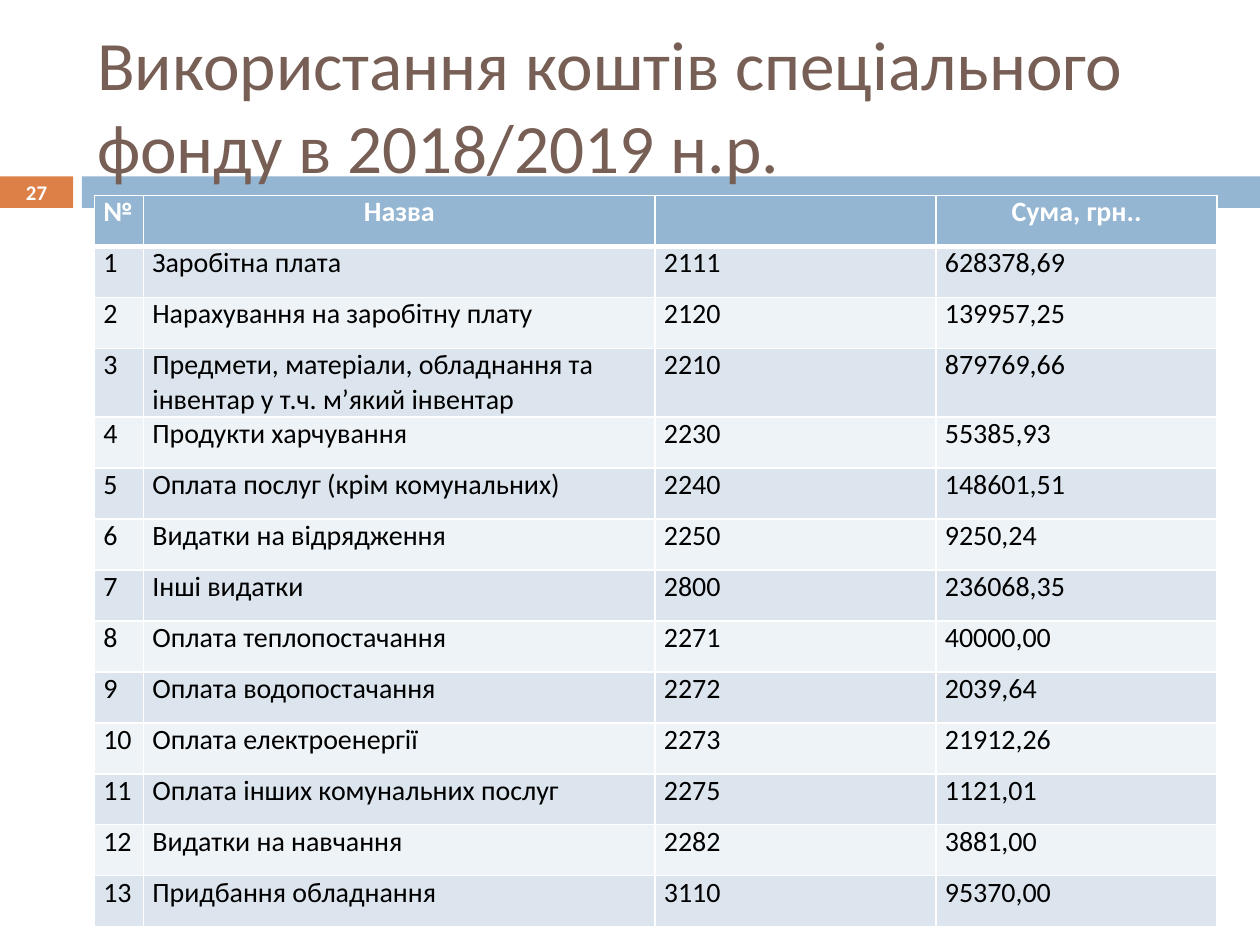
from dataclasses import dataclass

from lxml import etree
from pptx import Presentation
from pptx import util as u
from pptx.dml.color import RGBColor
from pptx.enum import shapes, text
from pptx.oxml import ns


@dataclass(frozen=True)
class Theme:
    font: str = "Calibri"
    brown: str = "775F55"
    orange: str = "DD8047"
    blue: str = "94B6D2"
    odd: str = "DCE5EE"
    even: str = "EEF3F7"
    white: str = "FFFFFF"
    black: str = "000000"
    title: float = 39.6
    body: float = 16
    page: float = 11.9


THEME = Theme()
ALIGN = text.PP_ALIGN
HEADS = ["№", "Назва", "", "Сума, грн.."]
HEAD_ALIGN = [ALIGN.JUSTIFY, ALIGN.CENTER, ALIGN.CENTER, ALIGN.CENTER]
COSTS = [
    ("Заробітна плата", "2111", "628378,69"),
    ("Нарахування на заробітну плату", "2120", "139957,25"),
    ("Предмети, матеріали, обладнання та інвентар у т.ч. м’який інвентар",
     "2210", "879769,66"),
    ("Продукти харчування", "2230", "55385,93"),
    ("Оплата послуг (крім комунальних)", "2240", "148601,51"),
    ("Видатки на відрядження", "2250", "9250,24"),
    ("Інші видатки", "2800", "236068,35"),
    ("Оплата теплопостачання", "2271", "40000,00"),
    ("Оплата водопостачання", "2272", "2039,64"),
    ("Оплата електроенергії", "2273", "21912,26"),
    ("Оплата інших комунальних послуг", "2275", "1121,01"),
    ("Видатки на навчання", "2282", "3881,00"),
    ("Придбання обладнання", "3110", "95370,00"),
]
WIDTHS = [0.39, 4.06, 2.23, 2.23]


def assign(item, values):
    for name, value in values.items():
        setattr(item, name, value)


def box(*sides):
    return [u.Inches(side) for side in sides]


def paint(fill, color):
    fill.solid()
    fill.fore_color.rgb = RGBColor.from_string(color)


def write(frame, words, size, color, bold=False, align=ALIGN.LEFT):
    par = frame.paragraphs[0]
    par.alignment = align
    run = par.add_run()
    run.text = words
    assign(run.font, {"name": THEME.font, "size": u.Pt(size), "bold": bold})
    run.font.color.rgb = RGBColor.from_string(color)


def add_band(slide, left, width, color):
    band = slide.shapes.add_shape(shapes.MSO_SHAPE.RECTANGLE,
                                  *box(left, 1.4, width, 0.25))
    band.shadow.inherit = False
    paint(band.fill, color)
    band.line.fill.background()


def set_title(slide, words):
    title = slide.shapes.title
    assign(title, dict(zip(("left", "top", "width", "height"),
                           box(0.67, 0.25, 8.92, 1.16))))
    frame = title.text_frame
    assign(frame, {"word_wrap": True, "auto_size": text.MSO_AUTO_SIZE.NONE,
                   "vertical_anchor": text.MSO_ANCHOR.MIDDLE})
    write(frame, words, THEME.title, THEME.brown)
    # The title lies above the bands and below the table.
    slide.shapes._spTree.append(title._element)


def add_edges(cell, base):
    """Draw white cell borders, with the bottom one base points wide."""
    props = cell._tc.get_or_add_tcPr()
    for spot, (tag, width) in enumerate(
            [("a:lnL", 1), ("a:lnR", 1), ("a:lnT", 1), ("a:lnB", base)]):
        line = etree.Element(ns.qn(tag), w=str(u.Pt(width)))
        fill = etree.SubElement(line, ns.qn("a:solidFill"))
        etree.SubElement(fill, ns.qn("a:srgbClr"), val=THEME.white)
        props.insert(spot, line)


def fill_cell(cell, words, back, color, bold, align, base):
    assign(cell, {"margin_left": u.Inches(0.07), "margin_right": u.Inches(0.07),
                  "margin_top": 0, "margin_bottom": 0})
    paint(cell.fill, back)
    add_edges(cell, base)
    write(cell.text_frame, words, THEME.body, color, bold, align)


def add_costs(slide):
    count = len(COSTS) + 1
    table = slide.shapes.add_table(count, len(HEADS),
                                   *box(0.75, 1.55, sum(WIDTHS), 5.67)).table
    for col, width in zip(table.columns, WIDTHS):
        col.width = u.Inches(width)
    for row in table.rows:
        row.height = u.Inches(5.67 / count)
    for cell, words, align in zip(table.rows[0].cells, HEADS, HEAD_ALIGN):
        fill_cell(cell, words, THEME.blue, THEME.white, True, align, 3)
    for num, cost in enumerate(COSTS, 1):
        back = THEME.odd if num % 2 else THEME.even
        for cell, words in zip(table.rows[num].cells, (str(num), *cost)):
            fill_cell(cell, words, back, THEME.black, False, ALIGN.LEFT, 1)
    # The header's wide rule is shared with the first row of costs.
    for cell in table.rows[1].cells:
        cell._tc.tcPr.find(ns.qn("a:lnT")).set("w", str(u.Pt(3)))


def add_page(slide, words):
    frame = slide.shapes.add_textbox(*box(0, 1.39, 0.58, 0.27)).text_frame
    assign(frame, {"word_wrap": True, "margin_left": 0, "margin_right": 0,
                   "margin_top": 0, "margin_bottom": 0,
                   "vertical_anchor": text.MSO_ANCHOR.MIDDLE})
    write(frame, words, THEME.page, THEME.white, True, ALIGN.CENTER)


def main():
    deck = Presentation()
    assign(deck, {"slide_width": u.Inches(10), "slide_height": u.Inches(7.5)})
    slide = deck.slides.add_slide(deck.slide_layouts[5])
    add_band(slide, 0, 0.58, THEME.orange)
    add_band(slide, 0.65, 9.35, THEME.blue)
    set_title(slide, "Використання коштів спеціального фонду в 2018/2019 н.р.")
    add_costs(slide)
    add_page(slide, "27")
    deck.save("out.pptx")


if __name__ == "__main__":
    main()
